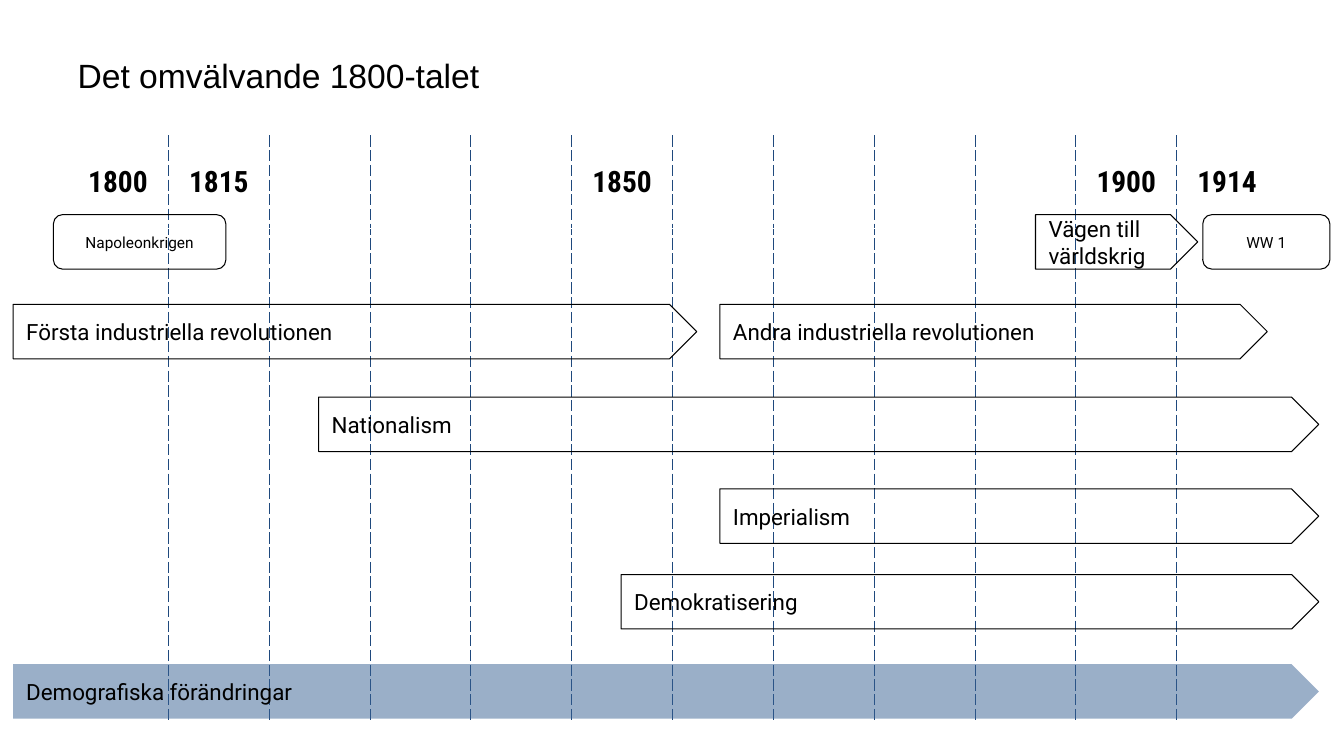
from lxml.etree import SubElement
from pptx import Presentation
from pptx.dml.color import RGBColor
from pptx.enum.shapes import MSO_SHAPE
from pptx.enum.text import MSO_ANCHOR, PP_ALIGN
from pptx.oxml import parse_xml
from pptx.oxml.ns import nsdecls, qn
from pptx.util import Inches, Pt

COLORS = {"text": "000000", "grid": "1F497D", "band": "376092"}
COLUMNS = 12
ROW_HEIGHTS = (0.92, 4.9)
TITLE_BOX = (0.67, 0.47, 12, 0.54)
TIMELINE_BOX = (0.67, 1.35, 12, 5.82)
BAR_HEIGHT = 0.54
INSET = 0.13
YEARS = {0: "1800", 1: "1815", 5: "1850", 10: "1900", 11: "1914"}

# Text, first and last column position, distance from the timeline's top
PERIODS = [
    ("Nationalism", 2.49, 12.41, 2.59),
    ("Imperialism", 6.47, 12.41, 3.5),
    ("Andra industriella revolutionen", 6.47, 11.9, 1.67),
    ("Demokratisering", 5.49, 12.41, 4.35),
    ("Vägen till världskrig", 9.6, 11.21, 0.78),
    ("Första industriella revolutionen", -0.54, 6.24, 1.67),
]
WARS = [("Napoleonkrigen", -0.14, 1.57, 0.78), ("WW 1", 11.26, 12.52, 0.78)]
DEMOGRAPHY = ("Demografiska förändringar", -0.54, 12.41, 5.24)

YEAR_FONT = {"name": "Roboto Condensed", "size": Pt(21), "bold": True}
PERIOD_FONT = {"name": "Roboto", "size": Pt(16)}
WAR_FONT = {"name": "Roboto", "size": Pt(11)}
TITLE_FONT = {"name": "Arial", "size": Pt(24), "bold": False}
MARGINS = {f"margin_{side}": Inches(INSET) for side in ("left", "right", "top", "bottom")}


def set_attributes(target, values):
    for name, value in values.items():
        setattr(target, name, value)


def write(text_frame, text, font, alignment):
    paragraph = text_frame.paragraphs[0]
    paragraph.alignment = alignment
    run = paragraph.add_run()
    run.text = text
    set_attributes(run.font, font)
    run.font.color.rgb = RGBColor.from_string(COLORS["text"])


def add_title(slide, box):
    title = slide.shapes.title
    set_attributes(title, dict(zip(("left", "top", "width", "height"), map(Inches, box))))
    title.text_frame.vertical_anchor = MSO_ANCHOR.MIDDLE
    write(title.text_frame, "Det omvälvande 1800-talet", TITLE_FONT, PP_ALIGN.LEFT)


def add_border(cell, side):
    line = parse_xml(
        f'<a:ln{side} {nsdecls("a")} w="{Pt(0.75)}"><a:solidFill>'
        f'<a:srgbClr val="{COLORS["grid"]}"/></a:solidFill><a:prstDash val="dash"/></a:ln{side}>')
    cell._tc.get_or_add_tcPr().insert(0, line)


def add_year_grid(slide, box):
    table = slide.shapes.add_table(len(ROW_HEIGHTS), COLUMNS, *map(Inches, box)).table
    set_attributes(table, {"first_row": False, "horz_banding": False})
    for row, height in zip(table.rows, ROW_HEIGHTS):
        row.height = Inches(height)
        for index, cell in enumerate(row.cells):
            cell.fill.background()
            if index < COLUMNS - 1:
                add_border(cell, "R")
            if index > 0:
                add_border(cell, "L")
    for index, year in YEARS.items():
        cell = table.cell(0, index)
        set_attributes(cell, {**MARGINS, "vertical_anchor": MSO_ANCHOR.MIDDLE})
        write(cell.text_frame, year, YEAR_FONT, PP_ALIGN.CENTER)


def add_bar(slide, box, kind, bar, font, alignment):
    text, start, end, offset = bar
    left, top, width, _ = box
    column = width / COLUMNS
    shape = slide.shapes.add_shape(
        kind, Inches(left + start * column), Inches(top + offset),
        Inches((end - start) * column), Inches(BAR_HEIGHT))
    shape.shadow.inherit = False
    shape.fill.background()
    shape.line.color.rgb = RGBColor.from_string(COLORS["text"])
    shape.line.width = Pt(0.75)
    set_attributes(shape.text_frame,
                   {**MARGINS, "word_wrap": True, "vertical_anchor": MSO_ANCHOR.MIDDLE})
    write(shape.text_frame, text, font, alignment)
    return shape


def add_timeline(slide, box):
    add_year_grid(slide, box)
    for period in PERIODS:
        add_bar(slide, box, MSO_SHAPE.PENTAGON, period, PERIOD_FONT, PP_ALIGN.LEFT)
    for war in WARS:
        add_bar(slide, box, MSO_SHAPE.ROUNDED_RECTANGLE, war, WAR_FONT, PP_ALIGN.CENTER)
    band = add_bar(slide, box, MSO_SHAPE.PENTAGON, DEMOGRAPHY, PERIOD_FONT, PP_ALIGN.LEFT)
    band.line.fill.background()
    band.fill.solid()
    band.fill.fore_color.rgb = RGBColor.from_string(COLORS["band"])
    color = band._element.spPr.find(qn("a:solidFill")).find(qn("a:srgbClr"))
    SubElement(color, qn("a:alpha")).set("val", "50000")


def main():
    presentation = Presentation()
    set_attributes(presentation, {"slide_width": Inches(13.33), "slide_height": Inches(7.5)})
    slide = presentation.slides.add_slide(presentation.slide_layouts[5])
    add_title(slide, TITLE_BOX)
    add_timeline(slide, TIMELINE_BOX)
    presentation.save("out.pptx")


if __name__ == "__main__":
    main()
